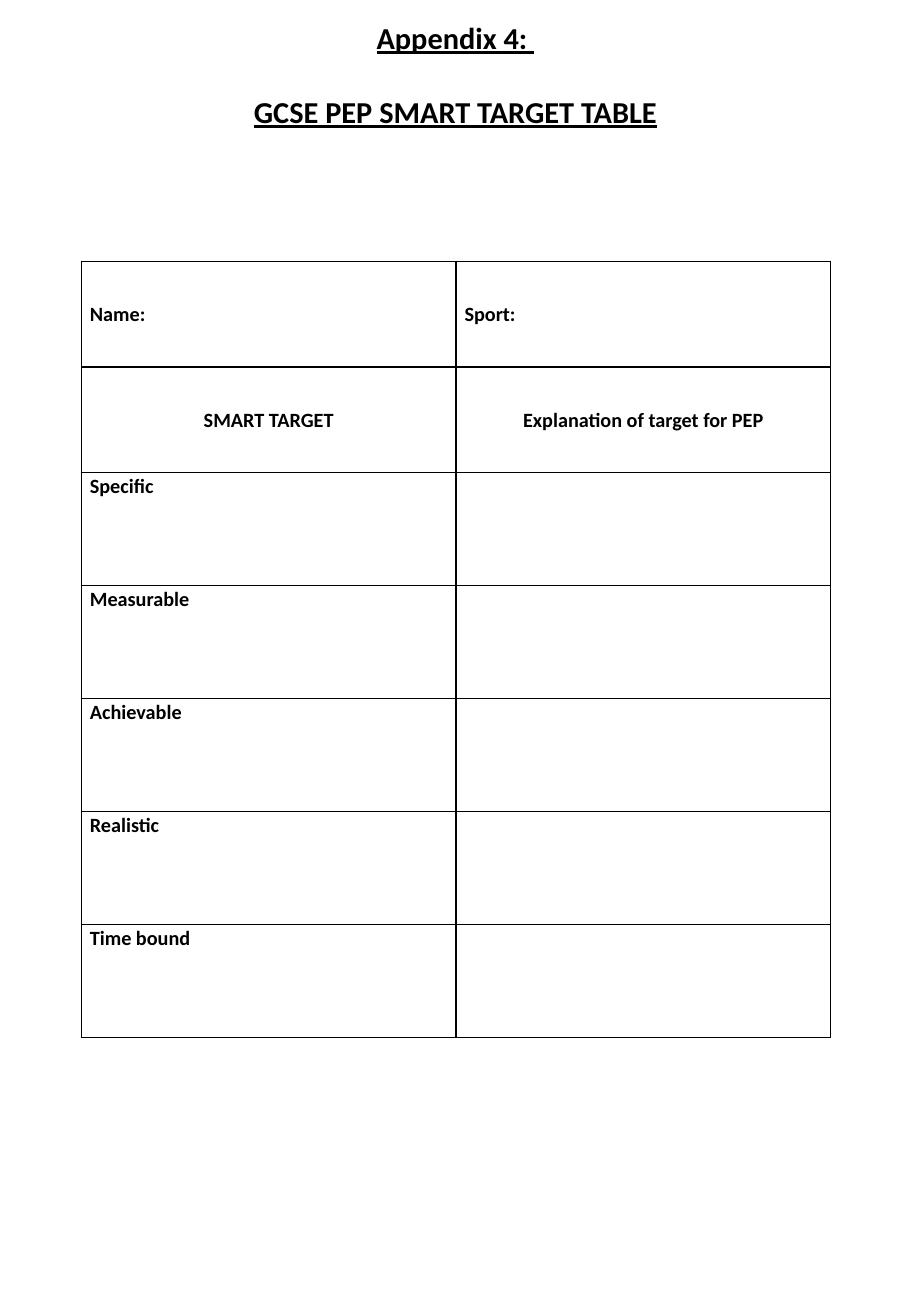
from lxml import etree
from pptx import Presentation
from pptx.dml.color import RGBColor
from pptx.enum.text import MSO_ANCHOR, PP_ALIGN
from pptx.oxml.ns import qn
from pptx.util import Inches, Pt

BLACK = RGBColor(0, 0, 0)
FONT = "Calibri"
LEFT, CENTER = PP_ALIGN.LEFT, PP_ALIGN.CENTER
TOP, MIDDLE = MSO_ANCHOR.TOP, MSO_ANCHOR.MIDDLE
WIDE, HIGH = Inches(7.5), Inches(10.83)
HEAD, BODY = Inches(0.87), Inches(0.93)
TITLE = ["Appendix 4: ", "GCSE PEP SMART TARGET TABLE"]
ROWS = [
    ("Name:", "Sport:"),
    ("SMART TARGET", "Explanation of target for PEP"),
    ("Specific", ""),
    ("Measurable", ""),
    ("Achievable", ""),
    ("Realistic", ""),
    ("Time bound", ""),
]


def add_run(para, text, size, under=False):
    run = para.add_run()
    run.text = text
    font = run.font
    font.name, font.size = FONT, Pt(size)
    font.bold, font.underline = True, under
    font.color.rgb = BLACK


def add_border(cell):
    props = cell._tc.get_or_add_tcPr()
    for spot, side in enumerate(("a:lnL", "a:lnR", "a:lnT", "a:lnB")):
        line = etree.Element(qn(side), w=str(Pt(1)))
        fill = etree.SubElement(line, qn("a:solidFill"))
        etree.SubElement(fill, qn("a:srgbClr"), val=str(BLACK))
        props.insert(spot, line)


def add_title(slide, left, top, width, height):
    frame = slide.shapes.add_textbox(left, top, width, height).text_frame
    frame.word_wrap = True
    frame.vertical_anchor = TOP
    for index, text in enumerate(TITLE):
        para = frame.paragraphs[0] if index == 0 else frame.add_paragraph()
        para.alignment = CENTER
        if index:
            para.space_before = Pt(22)
        add_run(para, text, 18, True)


def add_targets(slide, left, top, width):
    height = 2 * HEAD + (len(ROWS) - 2) * BODY
    table = slide.shapes.add_table(len(ROWS), 2, left, top, width, height).table
    table.first_row = table.horz_banding = False
    for col in table.columns:
        col.width = width // 2
    for index, texts in enumerate(ROWS):
        table.rows[index].height = HEAD if index < 2 else BODY
        for cell, text in zip(table.rows[index].cells, texts):
            cell.fill.background()
            add_border(cell)
            cell.margin_left = cell.margin_right = Inches(0.07)
            cell.margin_top = cell.margin_bottom = 0
            cell.vertical_anchor = MIDDLE if index < 2 else TOP
            if text:
                para = cell.text_frame.paragraphs[0]
                para.alignment = CENTER if index == 1 else LEFT
                para.line_spacing = 1.07
                add_run(para, text, 12)


def main():
    deck = Presentation()
    deck.slide_width, deck.slide_height = WIDE, HIGH
    slide = deck.slides.add_slide(deck.slide_layouts[6])
    add_targets(slide, Inches(0.67), Inches(2.15), Inches(6.17))
    add_title(slide, Inches(1.71), Inches(0.11), Inches(4.08), Inches(1.31))
    deck.save("out.pptx")


if __name__ == "__main__":
    main()
